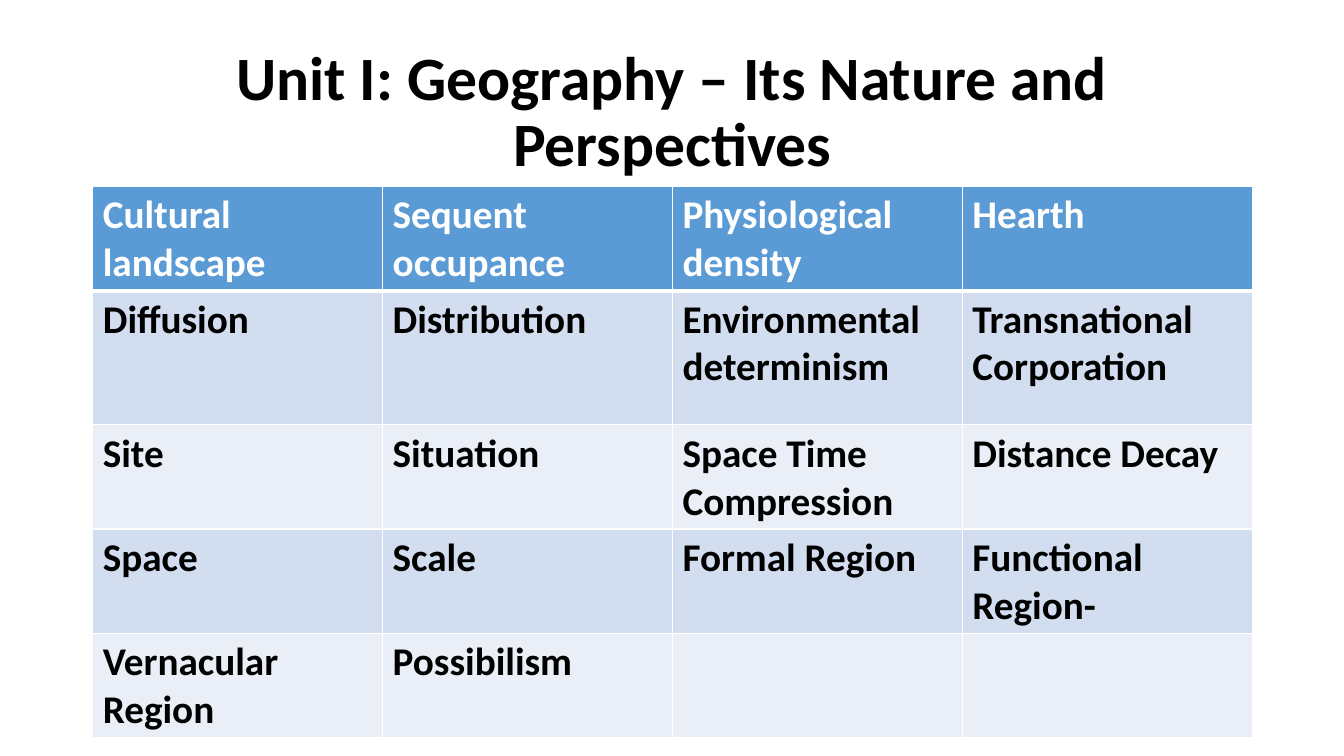
from dataclasses import dataclass

from lxml import etree
from pptx import Presentation
from pptx import util as u
from pptx.dml.color import RGBColor
from pptx.enum import text
from pptx.oxml.ns import qn


@dataclass(frozen=True)
class Theme:
    font: str = "Calibri"
    title_size: int = 44
    cell_size: int = 28
    ink: str = "000000"
    paper: str = "FFFFFF"
    header: str = "5B9BD5"
    bands: tuple = ("D2DEEF", "EAEFF7")
    rule: int = 1
    header_rule: int = 3


THEME = Theme()
WIDTH, HEIGHT = 13.33, 7.5
MARGIN = 0.92
CONTENT_WIDTH = 11.5
ROW_HEIGHTS = [0.93, 1.33, 0.93, 0.93, 0.93]
TERMS = [
    ["Cultural landscape", "Sequent occupance", "Physiological density", "Hearth"],
    ["Diffusion", "Distribution", "Environmental determinism", "Transnational Corporation"],
    ["Site", "Situation", "Space Time Compression", "Distance Decay"],
    ["Space", "Scale", "Formal Region", "Functional Region-"],
    ["Vernacular Region", "Possibilism", "", ""],
]


def write(tf, words, size, color, align=None, spacing=None):
    """Put one bold run of text into a text frame."""
    p = tf.paragraphs[0]
    p.alignment = align
    p.line_spacing = spacing
    r = p.add_run()
    r.text = words
    r.font.name = THEME.font
    r.font.size = u.Pt(size)
    r.font.bold = True
    r.font.color.rgb = RGBColor.from_string(color)


def set_borders(cell, bottom, top):
    """Draw the four cell edges, with widths in points."""
    tc_pr = cell._tc.get_or_add_tcPr()
    widths = {"lnL": THEME.rule, "lnR": THEME.rule, "lnT": top, "lnB": bottom}
    for edge, width in widths.items():
        ln = etree.SubElement(tc_pr, qn(f"a:{edge}"), w=str(u.Pt(width)))
        fill = etree.SubElement(ln, qn("a:solidFill"))
        etree.SubElement(fill, qn("a:srgbClr"), val=THEME.paper)


def add_title(slide, words, left, top, width, height):
    sp = slide.shapes.add_textbox(*map(u.Inches, (left, top, width, height)))
    tf = sp.text_frame
    tf.word_wrap = True
    tf.vertical_anchor = text.MSO_ANCHOR.MIDDLE
    write(tf, words, THEME.title_size, THEME.ink, text.PP_ALIGN.CENTER, 0.9)


def add_term_table(slide, terms, left, top, width, height):
    frame = slide.shapes.add_table(
        len(terms), len(terms[0]), *map(u.Inches, (left, top, width, height)))
    table = frame.table
    for row, row_height in zip(table.rows, ROW_HEIGHTS):
        row.height = u.Inches(row_height)
    frame.height = u.Inches(height)

    for i, row_terms in enumerate(terms):
        is_header = i == 0
        fill = THEME.header if is_header else THEME.bands[(i - 1) % 2]
        color = THEME.paper if is_header else THEME.ink
        bottom = THEME.header_rule if is_header else THEME.rule
        top_rule = THEME.header_rule if i == 1 else THEME.rule
        for j, term in enumerate(row_terms):
            cell = table.cell(i, j)
            set_borders(cell, bottom, top_rule)
            cell.fill.solid()
            cell.fill.fore_color.rgb = RGBColor.from_string(fill)
            if term:
                write(cell.text_frame, term, THEME.cell_size, color)


def main():
    prs = Presentation()
    prs.slide_width, prs.slide_height = u.Inches(WIDTH), u.Inches(HEIGHT)
    slide = prs.slides.add_slide(prs.slide_layouts[6])

    # Title above, vocabulary table below
    add_title(slide, "Unit I: Geography – Its Nature and Perspectives",
              MARGIN, 0.4, CONTENT_WIDTH, 1.45)
    add_term_table(slide, TERMS, MARGIN, 1.85, CONTENT_WIDTH, 5.46)
    prs.save("out.pptx")


if __name__ == "__main__":
    main()
